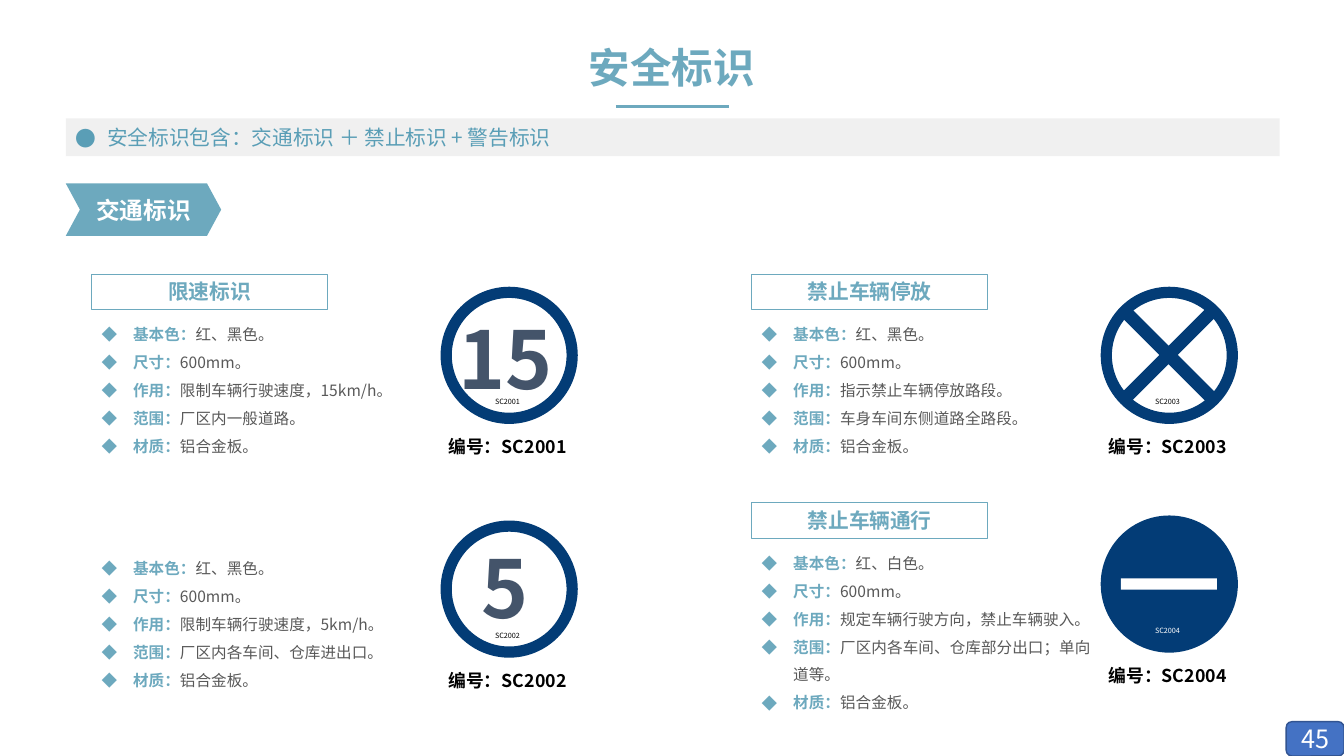
from lxml.etree import SubElement
from pptx import Presentation
from pptx.dml.color import RGBColor
from pptx.enum.shapes import MSO_CONNECTOR, MSO_SHAPE
from pptx.enum.text import MSO_ANCHOR, MSO_AUTO_SIZE, PP_ALIGN
from pptx.oxml.ns import qn
from pptx.util import Pt

FONT = "Noto Sans CJK SC"
COLORS = {
    "teal": "6DA9BE", "summary": "5A9EB6", "band": "D9D9D9", "navy": "033C76",
    "body": "595959", "slate": "44546A", "black": "000000", "white": "FFFFFF",
    "badge": "4472C4", "badge line": "325491",
}


def add_box(kind, left, top, width, height, fill=None, line=None, line_width=0.75):
    """Add a preset shape without shadow, or a text box when kind is None."""
    frame = Pt(left), Pt(top), Pt(width), Pt(height)
    if kind is None:
        return slide.shapes.add_textbox(*frame)
    shape = slide.shapes.add_shape(kind, *frame)
    shape.shadow.inherit = False
    if fill:
        shape.fill.solid()
        shape.fill.fore_color.rgb = RGBColor.from_string(COLORS[fill])
    else:
        shape.fill.background()
    if line:
        shape.line.color.rgb = RGBColor.from_string(COLORS[line])
        shape.line.width = Pt(line_width)
    else:
        shape.line.fill.background()
    return shape


def write(shape, paragraphs, size, align=PP_ALIGN.CENTER, anchor=MSO_ANCHOR.TOP,
          bullet=None, spacing=None, wrap=True):
    """Fill a shape with paragraphs, each a list of (text, color, bold) runs."""
    frame = shape.text_frame
    frame.word_wrap = wrap
    frame.auto_size = MSO_AUTO_SIZE.NONE
    frame.vertical_anchor = anchor
    for index, runs in enumerate(paragraphs):
        paragraph = frame.add_paragraph() if index else frame.paragraphs[0]
        paragraph.alignment = align
        if spacing:
            paragraph.line_spacing = spacing
        if bullet:
            properties = paragraph._p.get_or_add_pPr()
            properties.set("marL", str(Pt(22.5)))
            properties.set("indent", str(-Pt(22.5)))
            SubElement(properties, qn("a:buFont"), typeface=FONT)
            SubElement(properties, qn("a:buChar"), char=bullet)
        for text, color, bold in runs:
            run = paragraph.add_run()
            run.text = text
            run.font.size = Pt(size)
            run.font.bold = bold
            run.font.name = FONT
            run.font.color.rgb = RGBColor.from_string(COLORS[color])
            SubElement(run._r.get_or_add_rPr(), qn("a:ea"), typeface=FONT)


presentation = Presentation()
presentation.slide_width, presentation.slide_height = Pt(960), Pt(540)
slide = presentation.slides.add_slide(presentation.slide_layouts[5])

# Title and its underline
title = slide.shapes.title
title.left, title.top, title.width, title.height = Pt(332), Pt(29.5), Pt(296), Pt(36)
title_frame = title.text_frame
title_frame.margin_left = title_frame.margin_right = 0
title_frame.margin_top = title_frame.margin_bottom = 0
write(title, [[("安全标识", "teal", True)]], 29.6, anchor=MSO_ANCHOR.MIDDLE)

underline = slide.shapes.add_connector(
    MSO_CONNECTOR.STRAIGHT, Pt(440), Pt(75.8), Pt(521), Pt(75.8))
underline.line.color.rgb = RGBColor.from_string(COLORS["teal"])
underline.line.width = Pt(2)
SubElement(underline._element.spPr, qn("a:effectLst"))

# Summary band and section chevron
band = add_box(MSO_SHAPE.RECTANGLE, 47, 84.5, 867, 27, fill="band")
band_color = band._element.spPr.find(qn("a:solidFill")).find(qn("a:srgbClr"))
SubElement(band_color, qn("a:alpha"), val="38000")
write(band, [[("安全标识包含：交通标识 ＋ 禁止标识 + 警告标识", "summary", False)]], 14.8,
      align=PP_ALIGN.LEFT, anchor=MSO_ANCHOR.MIDDLE, bullet="●")

section = add_box(MSO_SHAPE.CHEVRON, 47, 131, 111, 37.5, fill="teal")
section.adjustments[0] = 0.27
section.text_frame.margin_left = section.text_frame.margin_right = 0
write(section, [[("交通标识", "white", True)]], 16.9, anchor=MSO_ANCHOR.MIDDLE)

# Sign panels: left, top of the list, code, label, basic colours, purpose, range
panels = [
    (65.5, 221.8, "SC2001", "限速标识", "红、黑色。",
     "限制车辆行驶速度，15km/h。", "厂区内一般道路。"),
    (537, 221.8, "SC2003", "禁止车辆停放", "红、黑色。",
     "指示禁止车辆停放路段。", "车身车间东侧道路全路段。"),
    (65.5, 388.8, "SC2002", None, "红、黑色。",
     "限制车辆行驶速度，5km/h。", "厂区内各车间、仓库进出口。"),
    (537, 385.2, "SC2004", "禁止车辆通行", "红、白色。",
     "规定车辆行驶方向，禁止车辆驶入。", "厂区内各车间、仓库部分出口；单向道等。"),
]
speed_limits = {"SC2001": ("15", 320.4, 217.4, 85), "SC2002": ("5", 337, 381.6, 49.7)}

for left, top, code, label, basic_colors, purpose, area in panels:
    if label:
        label_box = add_box(MSO_SHAPE.RECTANGLE, left, top - 26, 168.5, 25.2, line="teal")
        write(label_box, [[(label, "teal", True)]], 14.8)

    facts = [("基本色：", basic_colors), ("尺寸：", "600mm。"), ("作用：", purpose),
             ("范围：", area), ("材质：", "铝合金板。")]
    write(add_box(None, left, top, 249, 108),
          [[(name, "teal", True), (value, "body", False)] for name, value in facts],
          11.1, align=PP_ALIGN.JUSTIFY, bullet="◆", spacing=1.5)

    no_entry = code == "SC2004"
    add_box(MSO_SHAPE.OVAL, left + 253.2, top - 13, 90, 90,
            fill="navy" if no_entry else None, line="navy", line_width=8)
    if code in speed_limits:
        limit, *limit_frame = speed_limits[code]
        write(add_box(None, *limit_frame, 76.3), [[(limit, "slate", True)]], 57,
              align=PP_ALIGN.LEFT, wrap=False)
    elif no_entry:
        add_box(MSO_SHAPE.RECTANGLE, left + 263.7, top + 28, 68.5, 8, fill="white")
    else:
        cross = add_box(MSO_SHAPE.MATH_MULTIPLY, left + 238, top - 28, 119.5, 119.5,
                        fill="navy")
        cross.adjustments[0] = 0.078

    write(add_box(None, left + 266.4, top + 58.4, 61.2, 13.7),
          [[(code, "white" if no_entry else "black", False)]], 5.2)
    write(add_box(None, left + 201.6, top + 86.2, 190.8, 22.3),
          [[("编号：" + code, "black", True)]], 12.7)

# Page number
page_badge = add_box(MSO_SHAPE.ROUNDED_RECTANGLE, 918.7, 515.5, 41.3, 24.5,
                     fill="badge", line="badge line", line_width=1)
write(page_badge, [[("45", "white", False)]], 18, anchor=MSO_ANCHOR.MIDDLE)

presentation.save("out.pptx")
